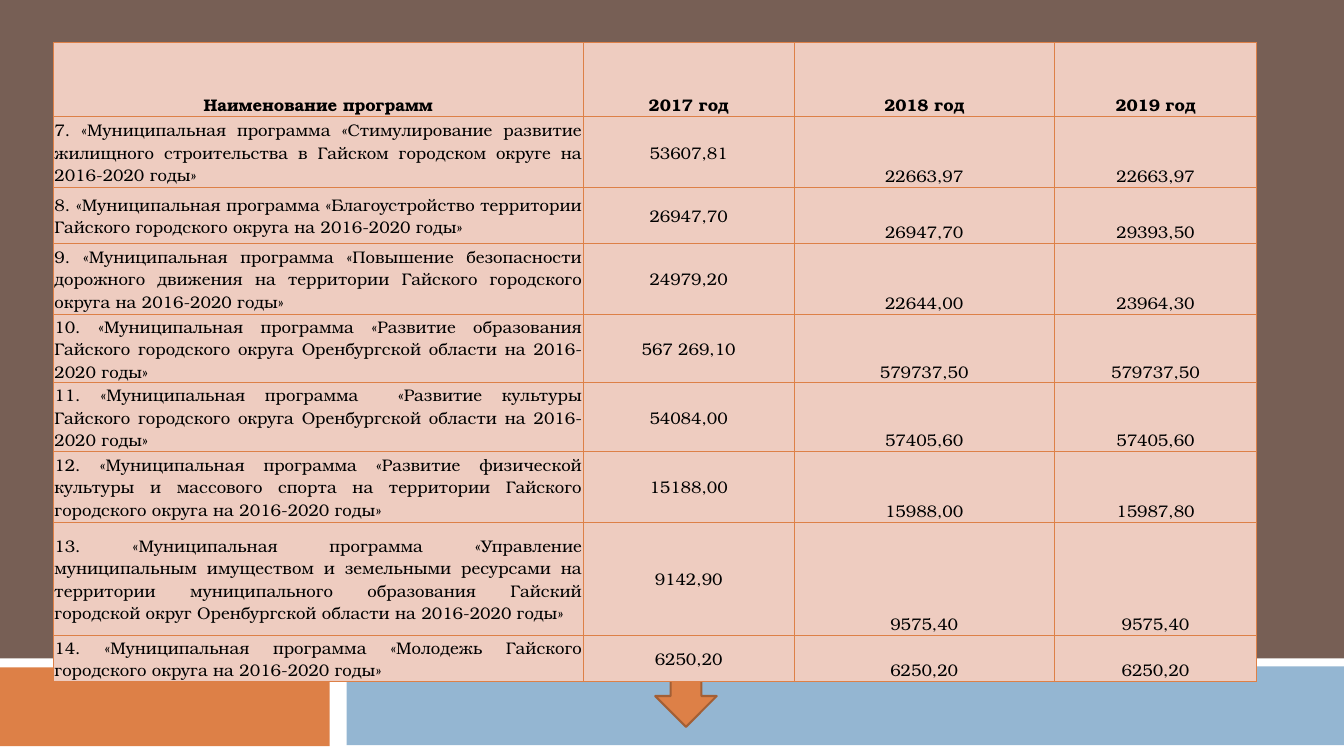
from lxml.etree import SubElement
from pptx import Presentation
from pptx.dml.color import RGBColor
from pptx.enum.shapes import MSO_SHAPE
from pptx.enum.text import MSO_ANCHOR, PP_ALIGN
from pptx.oxml.ns import qn
from pptx.util import Pt

COLORS = {
    "background": "775F55",
    "white": "FFFFFF",
    "orange": "DD8047",
    "dark_orange": "A35F35",
    "blue": "94B6D2",
    "cell": "EECCC0",
    "text": "000000",
}
FONT = "TeX Gyre Bonum"
BORDER_WIDTH = 0.79

COLUMN_WIDTHS = [378.5, 150.5, 186, 144.5]
ROW_HEIGHTS = [52.9, 50.7, 40, 50.7, 48.6, 48.6, 50.7, 80.7, 32.1]
HEADER = ("Наименование программ", "2017 год", "2018 год", "2019 год")
PROGRAMS = [
    ("7. «Муниципальная программа «Стимулирование развитие жилищного строительства "
     "в Гайском городском округе на 2016-2020 годы»",
     "53607,81", "22663,97", "22663,97"),
    ("8. «Муниципальная программа «Благоустройство территории Гайского городского "
     "округа на 2016-2020 годы»",
     "26947,70", "26947,70", "29393,50"),
    ("9. «Муниципальная программа «Повышение безопасности дорожного движения на "
     "территории Гайского городского округа на 2016-2020 годы»",
     "24979,20", "22644,00", "23964,30"),
    ("10. «Муниципальная программа «Развитие образования Гайского городского округа "
     "Оренбургской области на 2016-2020 годы»",
     "567 269,10", "579737,50", "579737,50"),
    ("11. «Муниципальная программа  «Развитие культуры Гайского городского округа "
     "Оренбургской области на 2016-2020 годы»",
     "54084,00", "57405,60", "57405,60"),
    ("12. «Муниципальная программа «Развитие физической культуры и массового спорта "
     "на территории Гайского городского округа на 2016-2020 годы»",
     "15188,00", "15988,00", "15987,80"),
    ("13. «Муниципальная программа «Управление муниципальным имуществом и земельными "
     "ресурсами на территории муниципального образования Гайский городской округ "
     "Оренбургской области на 2016-2020 годы»",
     "9142,90", "9575,40", "9575,40"),
    ("14. «Муниципальная программа «Молодежь Гайского городского округа на "
     "2016-2020 годы»",
     "6250,20", "6250,20", "6250,20"),
]


def rgb(name):
    return RGBColor.from_string(COLORS[name])


def add_block(slide, kind, left, top, width, height, color):
    block = slide.shapes.add_shape(kind, Pt(left), Pt(top), Pt(width), Pt(height))
    block.shadow.inherit = False
    block.fill.solid()
    block.fill.fore_color.rgb = rgb(color)
    block.line.fill.background()
    return block


def add_footer_bands(slide, left, top, width, height):
    bands = [
        (0, 0, width, height, "white"),
        (-0.7, 6.5, 236.2, 56.2, "orange"),
        (247.7, 5.8, width - 247.7, 56.2, "blue"),
    ]
    for dx, dy, band_width, band_height, color in bands:
        add_block(slide, MSO_SHAPE.RECTANGLE, left + dx, top + dy,
                  band_width, band_height, color)


def add_down_arrow(slide, left, top, width, height):
    arrow = add_block(slide, MSO_SHAPE.NOTCHED_RIGHT_ARROW,
                      left, top, width, height, "orange")
    arrow.rotation = 90
    arrow.line.color.rgb = rgb("dark_orange")
    arrow.line.width = Pt(1.5)


def add_borders(cell):
    properties = cell._tc.get_or_add_tcPr()
    for index, side in enumerate(("lnL", "lnR", "lnT", "lnB")):
        border = SubElement(properties, qn(f"a:{side}"), w=str(Pt(BORDER_WIDTH)))
        fill = SubElement(border, qn("a:solidFill"))
        SubElement(fill, qn("a:srgbClr"), val=COLORS["orange"])
        properties.insert(index, border)  # borders come before the cell fill


def fill_cell(cell, text, alignment, anchor, bold):
    cell.fill.solid()
    cell.fill.fore_color.rgb = rgb("cell")
    add_borders(cell)
    cell.margin_left = cell.margin_right = cell.margin_top = Pt(0.7)
    cell.margin_bottom = 0
    cell.vertical_anchor = anchor
    cell.text_frame.text = text
    paragraph = cell.text_frame.paragraphs[0]
    paragraph.alignment = alignment
    font = paragraph.runs[0].font
    font.name = FONT
    font.size = Pt(12)
    font.bold = bold
    font.color.rgb = rgb("text")


def add_program_table(slide, left, top, width, height):
    rows = [HEADER, *PROGRAMS]
    programs = slide.shapes.add_table(len(rows), len(HEADER), Pt(left), Pt(top),
                                      Pt(width), Pt(height)).table
    programs.horz_banding = False
    for column, column_width in zip(programs.columns, COLUMN_WIDTHS):
        column.width = Pt(column_width)
    for row, row_height in zip(programs.rows, ROW_HEIGHTS):
        row.height = Pt(row_height)

    for r, values in enumerate(rows):
        is_header = r == 0
        for c, text in enumerate(values):
            is_name = c == 0 and not is_header
            alignment = PP_ALIGN.JUSTIFY if is_name else PP_ALIGN.CENTER
            # Names and 2017 sit mid-row; the header and later years at the bottom
            at_bottom = is_header or c > 1
            anchor = MSO_ANCHOR.BOTTOM if at_bottom else MSO_ANCHOR.MIDDLE
            fill_cell(programs.cell(r, c), text, alignment, anchor, is_header)


def main():
    deck = Presentation()
    deck.slide_width, deck.slide_height = Pt(960), Pt(540)
    slide = deck.slides.add_slide(deck.slide_layouts[6])
    slide.background.fill.solid()
    slide.background.fill.fore_color.rgb = rgb("background")

    add_footer_bands(slide, 0, 470.2, 960, 69.8)
    add_down_arrow(slide, 459.4, 466.6, 61.2, 43.9)
    add_program_table(slide, 38.2, 30.2, sum(COLUMN_WIDTHS), sum(ROW_HEIGHTS))
    deck.save("out.pptx")


if __name__ == "__main__":
    main()
